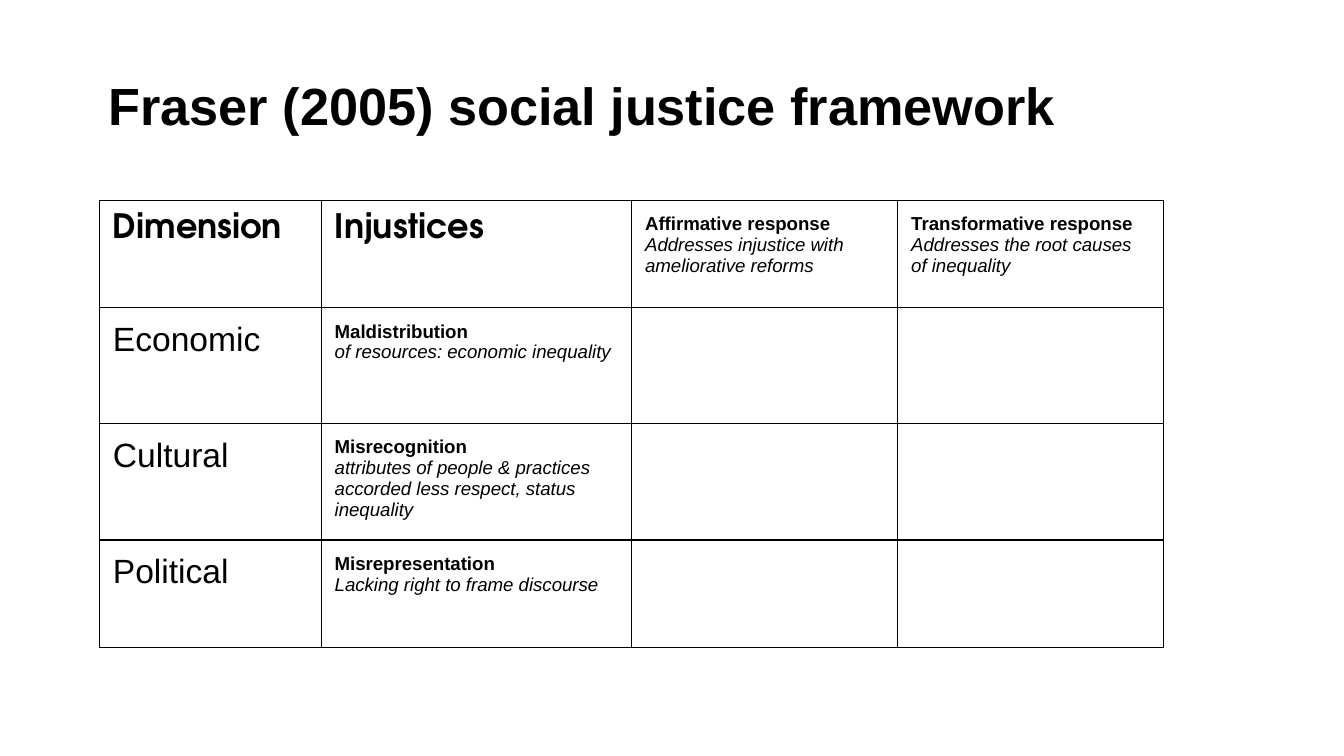
from lxml import etree
from pptx import Presentation
from pptx.dml.color import RGBColor
from pptx.oxml.ns import qn
from pptx.util import Inches, Pt

BLACK = "000000"
INSET = Inches(0.1)
HEADING = dict(name="TeX Gyre Adventor", size=Pt(18), bold=True)
DIMENSION = dict(name="Arial", size=Pt(18), bold=False)
TERM = dict(name="Arial", size=Pt(10), bold=True)
DETAIL = dict(name="Arial", size=Pt(10), bold=False, italic=True)
TITLE = dict(name="Arial", size=Pt(28), bold=True)

FRAME_SIZE = Inches(3.28)
COL_WIDTHS = [1.65, 2.31, 1.98, 1.98]
ROW_HEIGHTS = [0.8, 0.86, 0.7, 0.8]
HEADER = [
    [("Dimension", HEADING)],
    [("Injustices", HEADING)],
    [("Affirmative response", TERM),
     ("Addresses injustice with ameliorative reforms", DETAIL)],
    [("Transformative response", TERM),
     ("Addresses the root causes of inequality", DETAIL)],
]
INJUSTICES = [
    ("Economic", "Maldistribution", "of resources: economic inequality"),
    ("Cultural", "Misrecognition",
     "attributes of people & practices accorded less respect, status inequality"),
    ("Political", "Misrepresentation", "Lacking right to frame discourse"),
]


def color(hex_value):
    return RGBColor.from_string(hex_value)


def set_attributes(obj, values):
    for key, value in values.items():
        setattr(obj, key, value)


def set_insets(obj):
    for side in ("left", "right", "top", "bottom"):
        setattr(obj, f"margin_{side}", INSET)


def write_paragraphs(tf, paragraphs):
    for i, (text, fmt) in enumerate(paragraphs):
        p = tf.paragraphs[0] if i == 0 else tf.add_paragraph()
        r = p.add_run()
        r.text = text
        set_attributes(r.font, fmt)
        r.font.color.rgb = color(BLACK)


def add_title(s, text):
    box = s.shapes.add_textbox(Inches(0.71), Inches(0.5), Inches(7.69), Inches(0.82))
    tf = box.text_frame
    tf.word_wrap = True
    set_insets(tf)
    write_paragraphs(tf, [(text, TITLE)])
    tf.paragraphs[0].line_spacing = 0.9


def add_borders(cell):
    """Draw a thin line on all four sides; borders must precede the fill."""
    tcPr = cell._tc.get_or_add_tcPr()
    for i, side in enumerate(("a:lnL", "a:lnR", "a:lnT", "a:lnB")):
        ln = etree.Element(qn(side), w=str(Pt(0.75)))
        fill = etree.SubElement(ln, qn("a:solidFill"))
        etree.SubElement(fill, qn("a:srgbClr"), val=BLACK)
        tcPr.insert(i, ln)


def add_framework_table(s, rows):
    frame = s.shapes.add_table(len(rows), len(COL_WIDTHS), Inches(0.74), Inches(1.49),
                               FRAME_SIZE, FRAME_SIZE)
    table = frame.table
    set_attributes(table, dict(first_row=False, horz_banding=False))
    for column, width in zip(table.columns, COL_WIDTHS):
        column.width = Inches(width)
    for row, height, contents in zip(table.rows, ROW_HEIGHTS, rows):
        row.height = Inches(height)
        for cell, paragraphs in zip(row.cells, contents):
            set_insets(cell)
            cell.fill.background()
            add_borders(cell)
            write_paragraphs(cell.text_frame, paragraphs)
    # Row and column changes resize the frame, so its size is set last.
    set_attributes(frame, dict(width=FRAME_SIZE, height=FRAME_SIZE))


def main():
    prs = Presentation()
    prs.slide_width = Inches(10)
    prs.slide_height = prs.slide_width * 9 // 16
    s = prs.slides.add_slide(prs.slide_layouts[6])
    add_title(s, "Fraser (2005) social justice framework")
    body = [[[(dimension, DIMENSION)], [(term, TERM), (detail, DETAIL)], [], []]
            for dimension, term, detail in INJUSTICES]
    add_framework_table(s, [HEADER] + body)
    prs.save("out.pptx")


if __name__ == "__main__":
    main()
